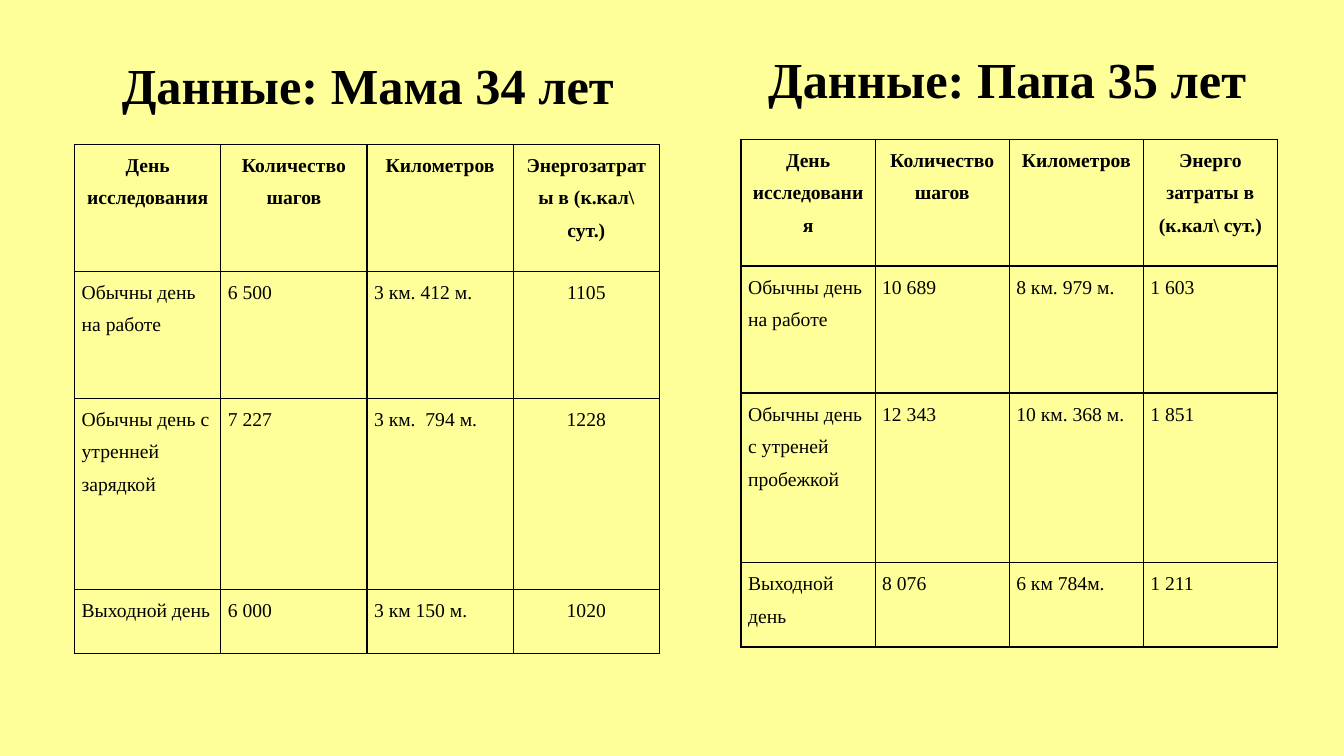
from dataclasses import dataclass

from lxml import etree
from pptx import Presentation
from pptx.dml.color import RGBColor
from pptx.enum.text import MSO_ANCHOR, PP_ALIGN
from pptx.oxml.ns import qn
from pptx.util import Inches, Pt

TOP = MSO_ANCHOR.TOP
LEFT = PP_ALIGN.LEFT
CENTER = PP_ALIGN.CENTER


@dataclass(frozen=True)
class Theme:
    background: str = "FFFF99"
    ink: str = "000000"
    font: str = "Times New Roman"
    title_size: int = 36
    cell_size: int = 14
    border_width: int = 1


THEME = Theme()

DAD_ROWS = [
    ["День исследования", "Количество шагов", "Километров", "Энерго затраты в (к.кал\\ сут.)"],
    ["Обычны день на работе", "10 689", "8 км. 979 м.", "1 603"],
    ["Обычны день с утреней пробежкой", "12 343", "10 км. 368 м.", "1 851"],
    ["Выходной день", "8 076", "6 км 784м.", "1 211"],
]
MOM_ROWS = [
    ["День исследования", "Количество шагов", "Километров", "Энергозатраты в (к.кал\\ сут.)"],
    ["Обычны день на работе", "6 500", "3 км. 412 м.", "1105"],
    ["Обычны день с утренней зарядкой", "7 227", "3 км.  794 м.", "1228"],
    ["Выходной день", "6 000", "3 км 150 м.", "1020"],
]


def write(text_frame, text, size, bold, alignment, line_spacing):
    paragraph = text_frame.paragraphs[0]
    paragraph.alignment = alignment
    paragraph.line_spacing = line_spacing
    run = paragraph.add_run()
    run.text = text
    run.font.name = THEME.font
    run.font.size = Pt(size)
    run.font.bold = bold
    run.font.color.rgb = RGBColor.from_string(THEME.ink)


def add_title(slide, text, left, top):
    shape = slide.shapes.add_textbox(Inches(left), Inches(top), Inches(5.15), Inches(1.45))
    text_frame = shape.text_frame
    text_frame.word_wrap = True
    text_frame.vertical_anchor = TOP
    text_frame.margin_top = Inches(0.15)
    write(text_frame, text, THEME.title_size, True, LEFT, 0.9)


def add_borders(cell):
    properties = cell._tc.get_or_add_tcPr()
    for side in ("a:lnL", "a:lnR", "a:lnT", "a:lnB"):
        line = etree.SubElement(properties, qn(side), w=str(Pt(THEME.border_width)))
        fill = etree.SubElement(line, qn("a:solidFill"))
        etree.SubElement(fill, qn("a:srgbClr"), val=THEME.ink)


def fill_cell(cell, text, bold, alignment):
    cell.margin_left = cell.margin_right = Inches(0.07)
    cell.margin_top = cell.margin_bottom = 0
    cell.vertical_anchor = TOP
    add_borders(cell)
    cell.fill.background()
    write(cell.text_frame, text, THEME.cell_size, bold, alignment, 1.5)


def add_data_table(slide, rows, left, top, column_width, row_heights, energy_alignment):
    column_count = len(rows[0])
    frame = slide.shapes.add_table(
        len(rows), column_count, Inches(left), Inches(top),
        Inches(column_width * column_count), Inches(sum(row_heights)),
    )
    table = frame.table
    table.first_row = False
    table.horz_banding = False
    for column in table.columns:
        column.width = Inches(column_width)
    for row, height in zip(table.rows, row_heights):
        row.height = Inches(height)
    for row_index, values in enumerate(rows):
        header = row_index == 0
        for column_index, text in enumerate(values):
            energy = column_index == column_count - 1
            alignment = CENTER if header else energy_alignment if energy else LEFT
            fill_cell(table.cell(row_index, column_index), text, header, alignment)


def main():
    presentation = Presentation()
    presentation.slide_width = Inches(13.33)
    presentation.slide_height = Inches(7.5)
    slide = presentation.slides.add_slide(presentation.slide_layouts[6])
    slide.background.fill.solid()
    slide.background.fill.fore_color.rgb = RGBColor.from_string(THEME.background)

    add_title(slide, "Данные: Папа 35 лет", 7.52, 0.4)
    add_data_table(slide, DAD_ROWS, 7.35, 1.38, 1.33, [1.26, 1.26, 1.68, 0.84], LEFT)
    add_title(slide, "Данные: Мама 34 лет", 1.11, 0.45)
    add_data_table(slide, MOM_ROWS, 0.74, 1.43, 1.45, [1.26, 1.26, 1.9, 0.63], CENTER)

    presentation.save("out.pptx")


if __name__ == "__main__":
    main()
